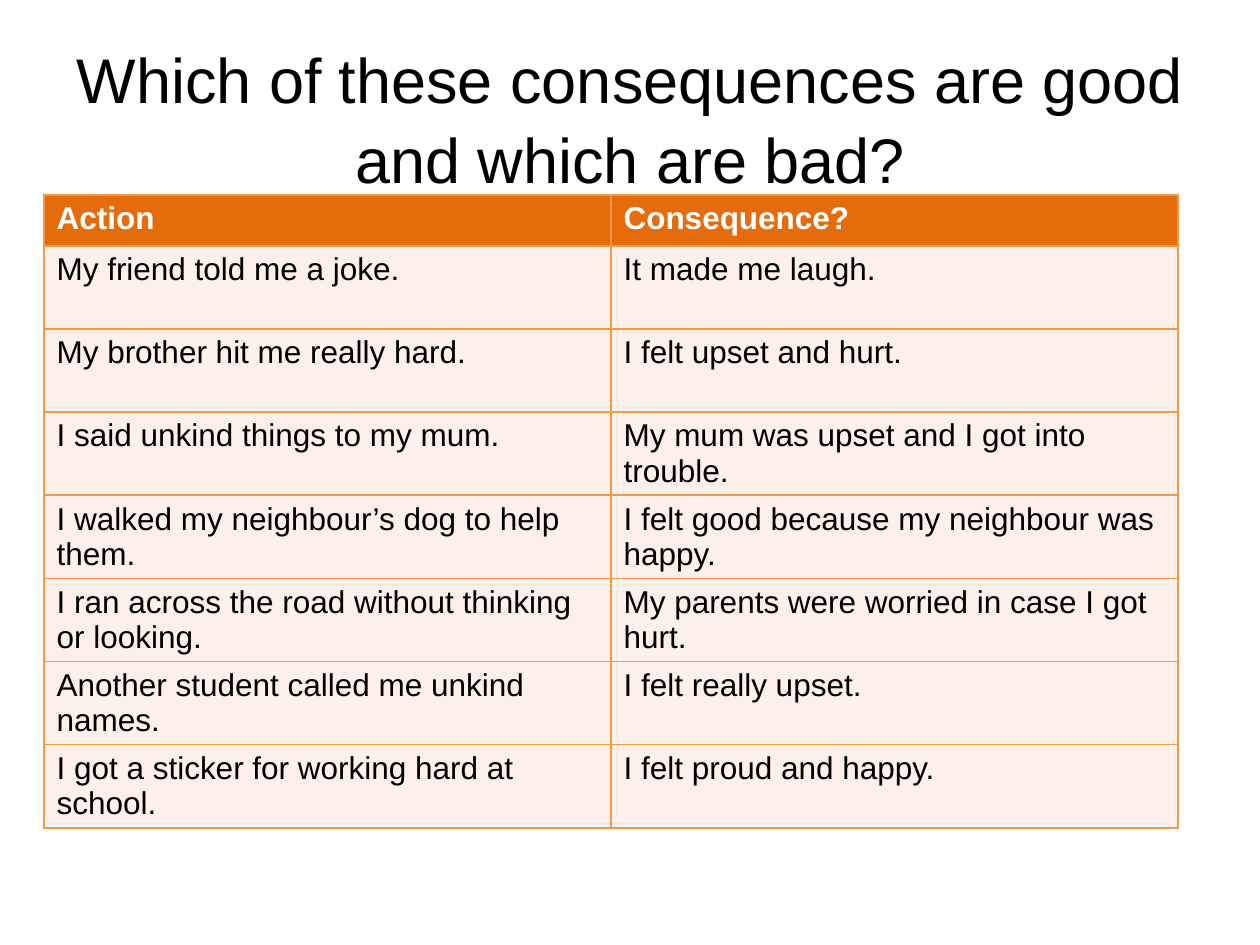
"""Build a slide with a table of actions and their consequences."""
from lxml import etree
from pptx import Presentation
from pptx.dml.color import RGBColor
from pptx.enum.text import MSO_ANCHOR, PP_ALIGN
from pptx.oxml.ns import qn
from pptx.util import Pt

CENTER, LEFT = PP_ALIGN.CENTER, PP_ALIGN.LEFT
MIDDLE, TOP = MSO_ANCHOR.MIDDLE, MSO_ANCHOR.TOP
COLORS = {"text": "000000", "header_text": "FFFFFF", "header": "E46C0A",
          "row": "FDEFE9", "border": "F79646"}
ROWS = [
    ("Action", "Consequence?"),
    ("My friend told me a joke.", "It made me laugh."),
    ("My brother hit me really hard.", "I felt upset and hurt."),
    ("I said unkind things to my mum.", "My mum was upset and I got into trouble."),
    ("I walked my neighbour’s dog to help them.", "I felt good because my neighbour was happy."),
    ("I ran across the road without thinking or looking.", "My parents were worried in case I got hurt."),
    ("Another student called me unkind names.", "I felt really upset."),
    ("I got a sticker for working hard at school.", "I felt proud and happy."),
]
HEADER_H, ROW_H, COLUMN_W = 51, 83, 567


def px(length):
    return round(length * 914400 / 126)


def write(frame, text, size=18, color="text", bold=False, align=LEFT, anchor=TOP, spacing=1.0):
    frame.word_wrap = True
    frame.vertical_anchor = anchor
    paragraph = frame.paragraphs[0]
    paragraph.alignment = align
    paragraph.line_spacing = spacing
    run = paragraph.add_run()
    run.text = text
    run.font.name = "Arial"
    run.font.size = Pt(size)
    run.font.bold = bold
    run.font.color.rgb = RGBColor.from_string(COLORS[color])


prs = Presentation()
prs.slide_width, prs.slide_height = px(1260), px(945)
slide = prs.slides.add_slide(prs.slide_layouts[5])

title = slide.shapes.title
title.left, title.top, title.width, title.height = px(63), px(38), px(1134), px(157)
write(title.text_frame, "Which of these consequences are good and which are bad?",
      size=36, align=CENTER, anchor=MIDDLE, spacing=1.05)

table_height = HEADER_H + ROW_H * (len(ROWS) - 1)
table = slide.shapes.add_table(len(ROWS), 2, px(44), px(195), px(2 * COLUMN_W), px(table_height)).table
for column in table.columns:
    column.width = px(COLUMN_W)

for row_index, row_texts in enumerate(ROWS):
    is_header = row_index == 0
    table.rows[row_index].height = px(HEADER_H if is_header else ROW_H)
    for column_index, text in enumerate(row_texts):
        cell = table.cell(row_index, column_index)
        write(cell.text_frame, text, bold=is_header, color="header_text" if is_header else "text")
        cell_properties = cell._tc.get_or_add_tcPr()
        for side in ("a:lnL", "a:lnR", "a:lnT", "a:lnB"):
            border = etree.SubElement(cell_properties, qn(side), w=str(Pt(1)))
            border_fill = etree.SubElement(border, qn("a:solidFill"))
            etree.SubElement(border_fill, qn("a:srgbClr"), val=COLORS["border"])
        cell.fill.solid()
        cell.fill.fore_color.rgb = RGBColor.from_string(COLORS["header" if is_header else "row"])

prs.save("out.pptx")
